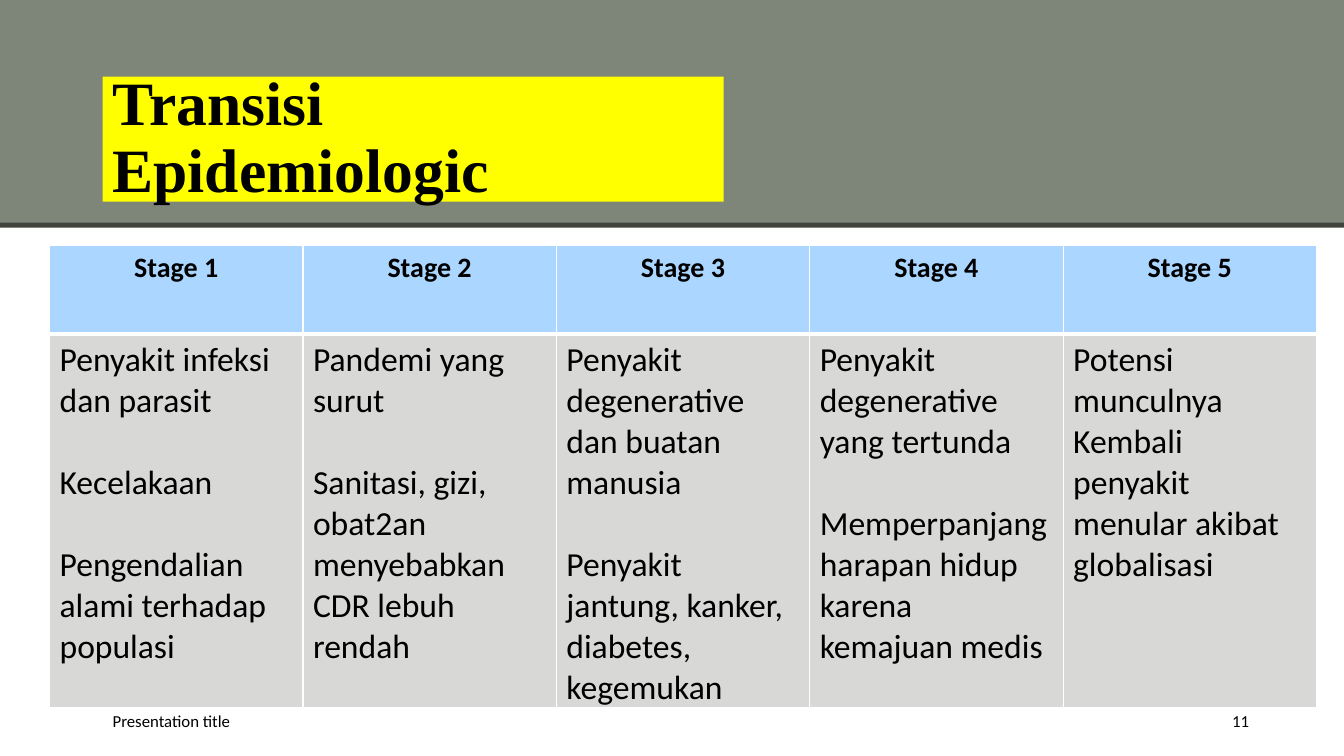
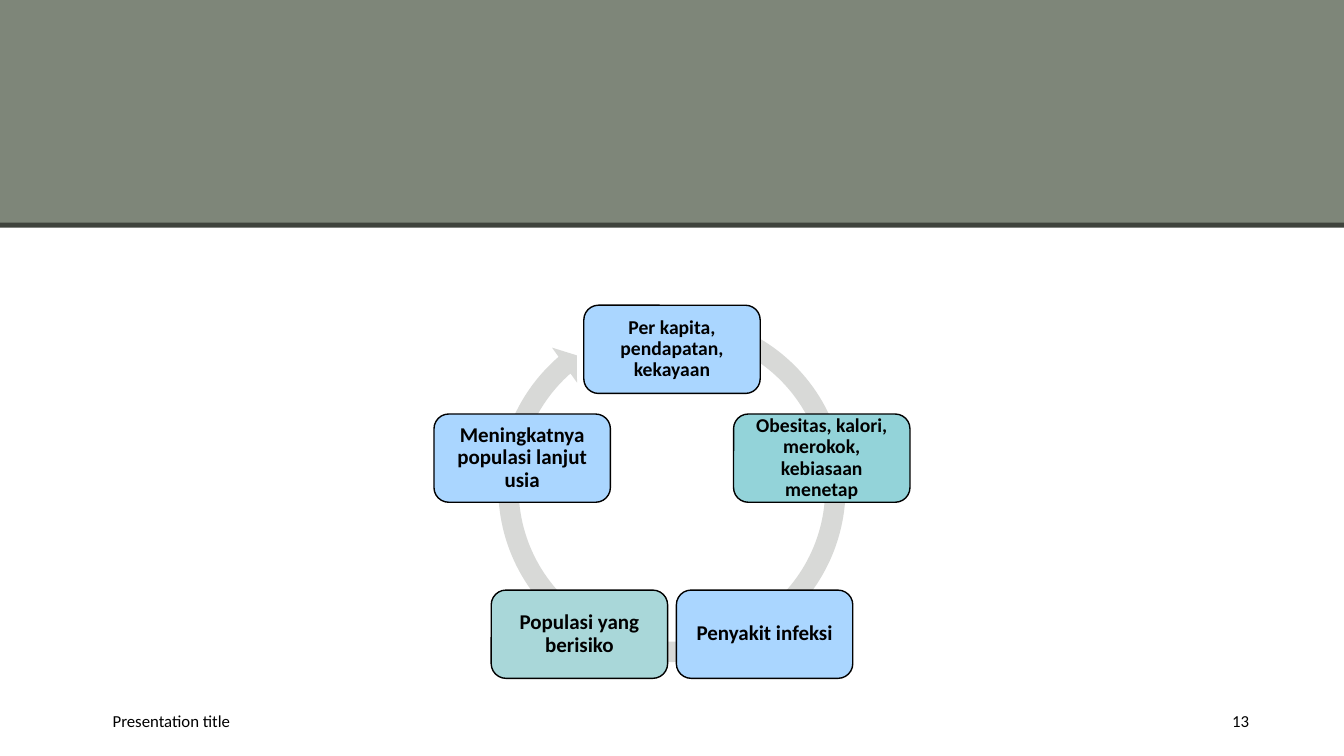
from math import cos, sin, radians
from lxml.etree import SubElement as Sub
from pptx import Presentation
from pptx.dml.color import RGBColor as Rgb
from pptx.enum.shapes import MSO_SHAPE as Kind
from pptx.enum.text import MSO_ANCHOR as Anchor, PP_ALIGN as Align
from pptx.oxml.ns import qn
from pptx.util import Pt

HUES = {
    "band": "7E8679", "rule": "3F433C", "mark": "FFFF00", "text": "000000",
    "blue": "AAD6FF", "teal": "93D3D9", "mint": "A9D7D9", "gray": "D8D9D7",
    "white": "FFFFFF",
}


def hue(name):
    return Rgb.from_string(HUES[name])


class Deck:
    """Holds the shared style and the current slide."""

    def __init__(self):
        self.prs = Presentation()
        self.prs.slide_width, self.prs.slide_height = Pt(960), Pt(540)
        self.slide = None

    def page(self, num):
        self.slide = self.prs.slides.add_slide(self.prs.slide_layouts[6])
        # Band with its dark lower edge
        self.shape(Kind.RECTANGLE, 0, 0, 960, 161, "band")
        self.shape(Kind.RECTANGLE, 0, 159, 960, 3.6, "rule")
        # Footer
        self.label("Presentation title", 73.4, 324, Align.LEFT)
        self.label(str(num), 837.4, 62, Align.RIGHT)

    def shape(self, kind, x, y, w, h, fill, line=None):
        item = self.slide.shapes.add_shape(kind, Pt(x), Pt(y), Pt(w), Pt(h))
        item.shadow.inherit = False
        item.fill.solid()
        item.fill.fore_color.rgb = hue(fill)
        if line:
            item.line.color.rgb = hue(line)
            item.line.width = Pt(1)
        else:
            item.line.fill.background()
        return item

    def text(self, frame, lines, size, bold=False, align=Align.LEFT,
             face="Calibri", gap=0, lead=None):
        frame.word_wrap = True
        frame.text = "\n".join(lines)
        for i, para in enumerate(frame.paragraphs):
            para.alignment = align
            para.line_spacing = lead
            if i:
                para.space_before = Pt(gap)
            font = para.font
            font.name, font.size, font.bold = face, Pt(size), bold
            font.color.rgb = hue("text")

    def label(self, text, x, w, align):
        box = self.slide.shapes.add_textbox(Pt(x), Pt(500.4), Pt(w), Pt(28.8))
        box.text_frame.vertical_anchor = Anchor.MIDDLE
        self.text(box.text_frame, [text], 12, align=align)

    def title(self, text):
        box = self.shape(Kind.RECTANGLE, 73.4, 54.7, 443.5, 89.3, "mark")
        box.text_frame.vertical_anchor = Anchor.MIDDLE
        box.text_frame.margin_right = Pt(12)
        self.text(box.text_frame, [text], 44, True,
                  face="Times New Roman", lead=0.9)

    def cell(self, cell, lines, fill, edges, **style):
        # Borders come before the fill in the cell properties
        props = cell._tc.get_or_add_tcPr()
        for side, wide in zip("LRTB", edges):
            edge = Sub(props, qn("a:ln" + side), w=str(Pt(wide)))
            Sub(Sub(edge, qn("a:solidFill")), qn("a:srgbClr"),
                val=HUES["white"])
        cell.fill.solid()
        cell.fill.fore_color.rgb = hue(fill)
        self.text(cell.text_frame, lines, **style)

    def table(self, cols):
        grid = self.slide.shapes.add_table(
            2, len(cols), Pt(35.4), Pt(175.2), Pt(905), Pt(310)).table
        grid.rows[0].height, grid.rows[1].height = Pt(63.5), Pt(246.5)
        for i, (head, *body) in enumerate(cols):
            grid.columns[i].width = Pt(905 / len(cols))
            self.cell(grid.cell(0, i), [head], "blue", (1, 1, 1, 3),
                      size=20, bold=True, align=Align.CENTER)
            self.cell(grid.cell(1, i), body, "gray", (1, 1, 3, 1),
                      size=24, gap=29.3)

    def cycle(self, nodes):
        # Ring behind the nodes
        ring = self.shape(Kind.CIRCULAR_ARROW, 347.9, 216.8, 264.2, 264.2,
                          "gray")
        for i, val in enumerate((0.055, 3.307, 137.365, 174.1, 0.058)):
            ring.adjustments[i] = val
        # Nodes at equal angles, clockwise from the top
        wide, high, rad = 126, 63, 112.5
        for i, (text, size, fill) in enumerate(nodes):
            turn = radians(360 / len(nodes) * i)
            x, y = 480 + rad * sin(turn), 362 - rad * cos(turn)
            node = self.shape(Kind.ROUNDED_RECTANGLE, x - wide / 2,
                              y - high / 2, wide, high, fill, "text")
            frame = node.text_frame
            frame.vertical_anchor = Anchor.MIDDLE
            frame.margin_left = frame.margin_right = Pt(4.3)
            frame.margin_top = frame.margin_bottom = Pt(4.3)
            self.text(frame, [text], size, True, Align.CENTER, lead=0.9)


def main():
    deck = Deck()

    # Stages of the transition
    deck.page(11)
    deck.title("Transisi Epidemiologic")
    deck.table([
        ("Stage 1", "Penyakit infeksi dan parasit", "Kecelakaan",
         "Pengendalian alami terhadap populasi"),
        ("Stage 2", "Pandemi yang surut",
         "Sanitasi, gizi, obat2an menyebabkan CDR lebuh rendah"),
        ("Stage 3", "Penyakit degenerative dan buatan manusia",
         "Penyakit jantung, kanker, diabetes, kegemukan"),
        ("Stage 4", "Penyakit degenerative yang tertunda",
         "Memperpanjang harapan hidup karena kemajuan medis"),
        ("Stage 5", "Potensi munculnya Kembali penyakit menular akibat "
         "globalisasi"),
    ])

    # Cycle of causes
    deck.page(13)
    deck.cycle([
        ("Per kapita, pendapatan, kekayaan", 14, "blue"),
        ("Obesitas, kalori, merokok, kebiasaan menetap", 14, "teal"),
        ("Penyakit infeksi", 15, "blue"),
        ("Populasi yang berisiko", 15, "mint"),
        ("Meningkatnya populasi lanjut usia", 15, "blue"),
    ])

    deck.prs.save("out.pptx")


if __name__ == "__main__":
    main()
